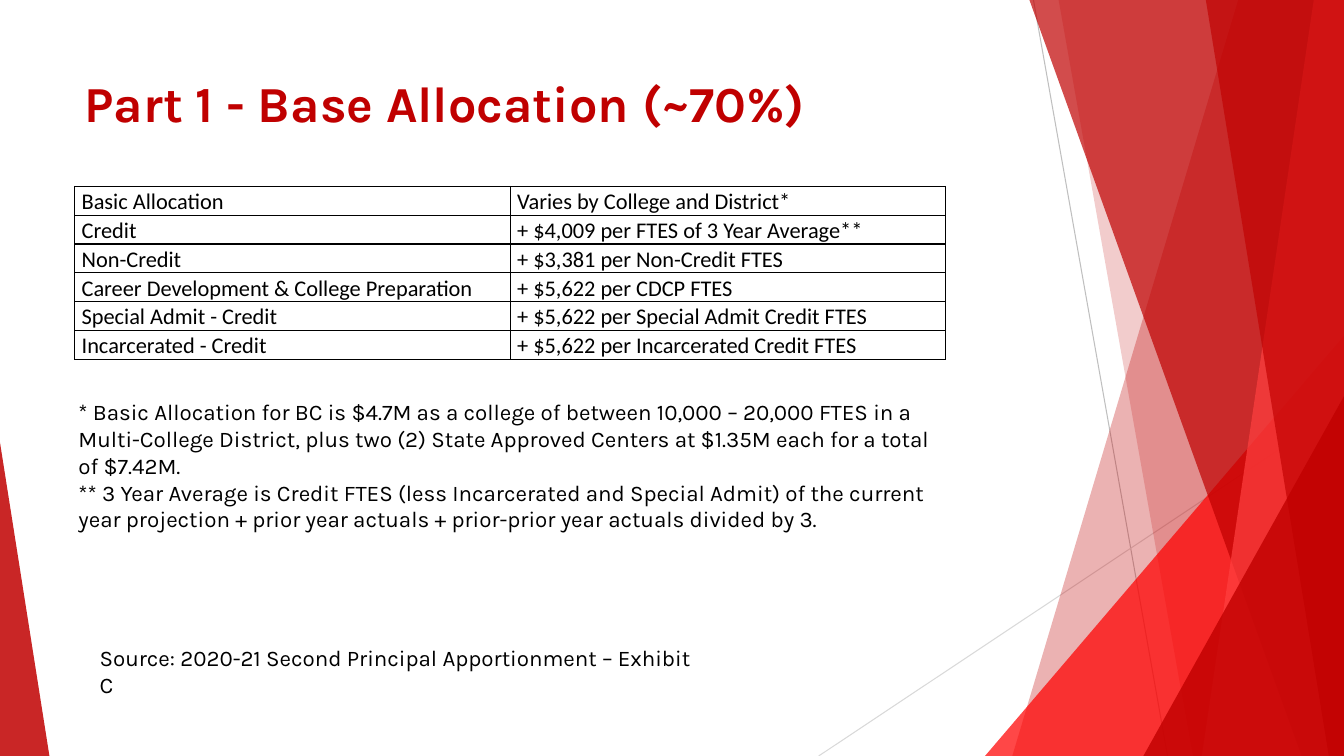
"""Build the base allocation slide."""
from dataclasses import dataclass

from pptx import Presentation, util as u
from pptx.dml.color import RGBColor
from pptx.enum import shapes, text
from pptx.oxml.ns import qn
from lxml import etree

PX = 9144
WIDTH, HEIGHT = 1333, 750


@dataclass(frozen=True)
class Theme:
    heading: str = "Karla"
    table: str = "Calibri"
    title_size: int = 36
    body_size: int = 16
    ink: str = "000000"
    red: str = "C00000"
    deep_red: str = "BF0000"
    bright_red: str = "FF0000"
    light_red: str = "FF4040"
    gray: str = "BFBFBF"
    pale_gray: str = "D9D9D9"


def write(frame, *paragraphs, font, size, color, bold=False, spacing=None):
    frame.word_wrap = True
    frame.vertical_anchor = text.MSO_ANCHOR.TOP
    for index, words in enumerate(paragraphs):
        paragraph = frame.paragraphs[0] if index == 0 else frame.add_paragraph()
        paragraph.alignment = text.PP_ALIGN.LEFT
        if spacing:
            paragraph.line_spacing = spacing
        run = paragraph.add_run()
        run.text = words
        run.font.name = font
        run.font.size = u.Pt(size)
        run.font.bold = bold
        run.font.color.rgb = RGBColor.from_string(color)


class SlideBuilder:
    def __init__(self, slide, theme):
        self.slide = slide
        self.theme = theme

    def line(self, start, end, color):
        ends = [value * PX for value in (*start, *end)]
        ray = self.slide.shapes.add_connector(shapes.MSO_CONNECTOR.STRAIGHT, *ends)
        ray.line.color.rgb = RGBColor.from_string(color)
        ray.line.width = u.Pt(0.75)
        etree.SubElement(ray._element.spPr, qn("a:effectLst"))

    def paint(self, facet, color, opacity):
        facet.shadow.inherit = False
        facet.line.fill.background()
        facet.fill.solid()
        facet.fill.fore_color.rgb = RGBColor.from_string(color)
        tint = facet._element.spPr.find(qn("a:solidFill")).find(qn("a:srgbClr"))
        etree.SubElement(tint, qn("a:alpha"), val=str(opacity * 1000))

    def band(self, top_left, bottom_left, color, opacity):
        outline = self.slide.shapes.build_freeform(top_left, 0, scale=PX)
        outline.add_line_segments(
            [(WIDTH, 0), (WIDTH, HEIGHT), (bottom_left, HEIGHT)], close=True)
        self.paint(outline.convert_to_shape(), color, opacity)

    def triangle(self, left, top, width, apex, color, opacity):
        facet = self.slide.shapes.add_shape(
            shapes.MSO_SHAPE.ISOSCELES_TRIANGLE,
            left * PX, top * PX, width * PX, (HEIGHT - top) * PX)
        facet.adjustments[0] = apex
        self.paint(facet, color, opacity)

    def words(self, box, *paragraphs, **style):
        frame = self.slide.shapes.add_textbox(*(value * PX for value in box)).text_frame
        write(frame, *paragraphs, **style)

    def table(self, left, top, column_width, row_height, rows):
        columns = len(rows[0])
        grid = self.slide.shapes.add_table(
            len(rows), columns, left * PX, top * PX,
            columns * column_width * PX, len(rows) * row_height * PX).table
        grid.first_row = grid.horz_banding = False
        for row, entries in enumerate(rows):
            for column, entry in enumerate(entries):
                self.cell(grid.cell(row, column), entry)

    def cell(self, cell, entry):
        cell.margin_left = cell.margin_right = 7 * PX
        cell.margin_top = cell.margin_bottom = 0
        properties = cell._tc.get_or_add_tcPr()
        for side in ("a:lnL", "a:lnR", "a:lnT", "a:lnB"):
            border = etree.SubElement(properties, qn(side), w=str(u.Pt(1)))
            fill = etree.SubElement(border, qn("a:solidFill"))
            etree.SubElement(fill, qn("a:srgbClr"), val=self.theme.ink)
        cell.fill.background()
        write(cell.text_frame, entry, font=self.theme.table,
              size=self.theme.body_size, color=self.theme.ink, spacing=1.07)


def main():
    deck = Presentation()
    deck.slide_width, deck.slide_height = WIDTH * PX, HEIGHT * PX
    theme = Theme()
    page = SlideBuilder(deck.slides.add_slide(deck.slide_layouts[6]), theme)

    page.line((1025, 0), (1158, HEIGHT), theme.gray)
    page.line((WIDTH, 403), (812, HEIGHT), theme.pale_gray)
    page.band(1228, 1004, theme.red, 30)
    page.band(1050, 1183, theme.red, 20)
    page.triangle(977, 333, 356, 1, theme.bright_red, 72)
    page.band(1021, 1291, theme.deep_red, 70)
    page.band(1303, 1192, theme.light_red, 70)
    page.band(1196, 1318, theme.red, 65)
    page.triangle(1134, 393, 199, 1, theme.red, 80)
    page.triangle(0, 439, 49, 0, theme.red, 85)

    page.words((74, 67, 940, 144), "Part 1 - Base Allocation (~70%)",
               font=theme.heading, size=theme.title_size, color=theme.red, bold=True)
    body = dict(font=theme.heading, size=theme.body_size, color=theme.ink)
    page.words(
        (68, 390, 876, 172),
        "* Basic Allocation for BC is $4.7M as a college of between 10,000 – 20,000 FTES "
        "in a Multi-College District, plus two (2) State Approved Centers at $1.35M each "
        "for a total of $7.42M.",
        "** 3 Year Average is Credit FTES (less Incarcerated and Special Admit) of the "
        "current year projection + prior year actuals + prior-prior year actuals "
        "divided by 3.",
        **body)
    page.table(74, 185, 432, 26, [
        ("Basic Allocation", "Varies by College and District*"),
        ("Credit", "+ $4,009 per FTES of 3 Year Average**"),
        ("Non-Credit", "+ $3,381 per Non-Credit FTES"),
        ("Career Development & College Preparation", "+ $5,622 per CDCP FTES"),
        ("Special Admit - Credit", "+ $5,622 per Special Admit Credit FTES"),
        ("Incarcerated - Credit", "+ $5,622 per Incarcerated Credit FTES"),
    ])
    page.words((89, 634, 622, 37),
               "Source: 2020-21 Second Principal Apportionment – Exhibit C", **body)

    deck.save("out.pptx")


if __name__ == "__main__":
    main()
